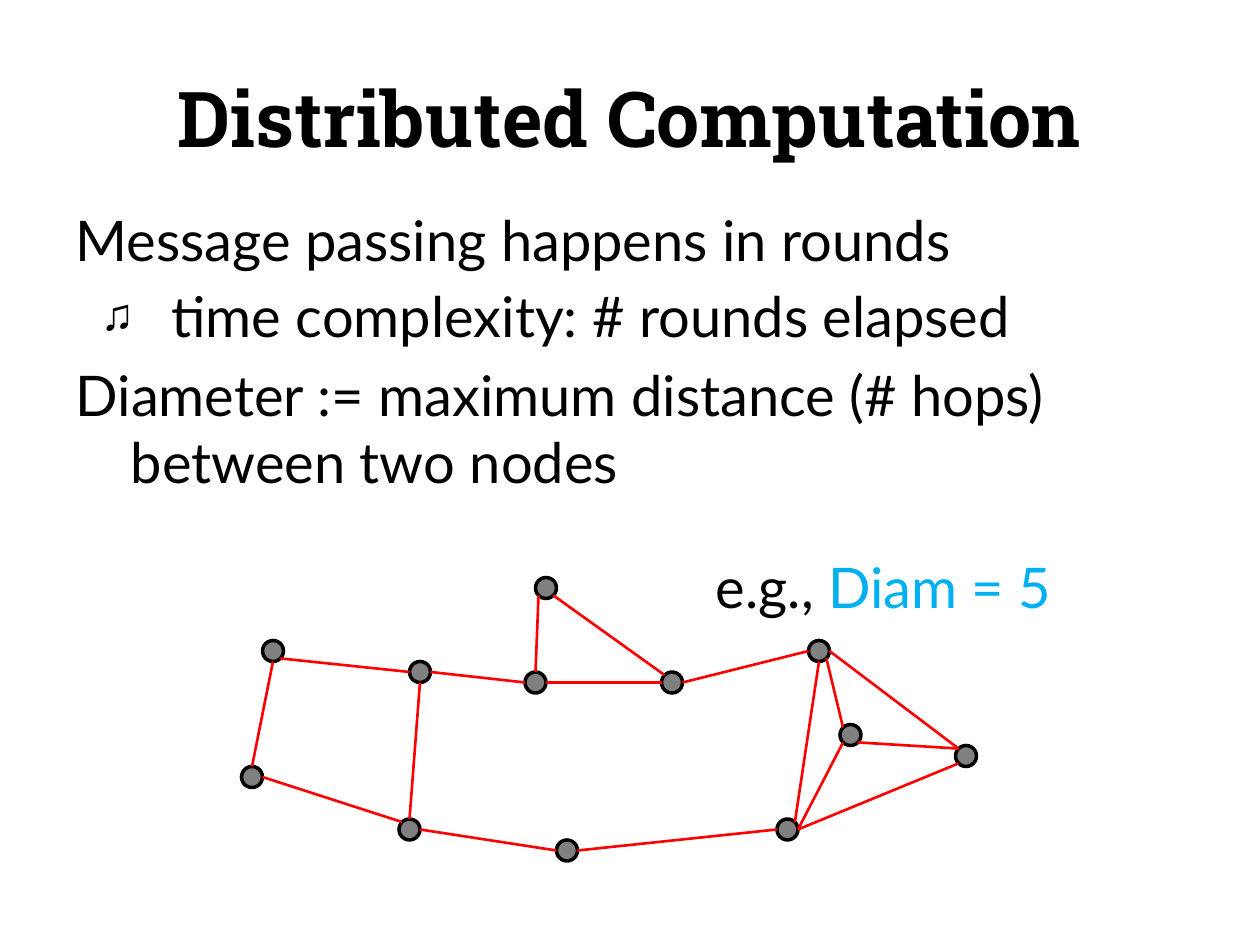
from math import cos, radians, sin

from lxml.etree import SubElement
from pptx import Presentation
from pptx.dml.color import RGBColor
from pptx.enum.shapes import MSO_CONNECTOR, MSO_SHAPE
from pptx.enum.text import MSO_ANCHOR, MSO_AUTO_SIZE, PP_ALIGN
from pptx.oxml.ns import qn
from pptx.util import Pt

COLORS = {"text": "000000", "accent": "00B0F0", "node": "808080",
          "outline": "000000", "edge": "FF0000"}
BODY_FONT = {"name": "Lato", "size": Pt(32)}
TITLE_FONT = {"name": "Roboto Slab", "size": Pt(44), "bold": True}
RADIUS = 6


def add_run(paragraph, text, font_format, color="text"):
    run = paragraph.add_run()
    run.text = text
    for attribute, value in font_format.items():
        setattr(run.font, attribute, value)
    run.font.color.rgb = RGBColor.from_string(COLORS[color])


def place(shape, left, top, width, height):
    box = {"left": left, "top": top, "width": width, "height": height}
    for attribute, value in box.items():
        setattr(shape, attribute, Pt(value))


presentation = Presentation()
presentation.slide_width, presentation.slide_height = Pt(720), Pt(540)
slide = presentation.slides.add_slide(presentation.slide_layouts[1])
title, statements = slide.placeholders

# Title
place(title, 36, 21.6, 648, 90)
title.text_frame.vertical_anchor = MSO_ANCHOR.MIDDLE
heading = title.text_frame.paragraphs[0]
heading.alignment = PP_ALIGN.CENTER
add_run(heading, "Distributed Computation", TITLE_FONT)

# Statements: text, level, left margin, bullet
place(statements, 36, 114, 684, 390)
LINES = [
    ("Message passing happens in rounds", 0, 31.5, None),
    ("time complexity: # rounds elapsed", 1, 54.75, "♫"),
    ("Diameter := maximum distance (# hops) between two nodes", 0, 31.5, None),
]
for number, (text, level, margin, bullet) in enumerate(LINES):
    frame = statements.text_frame
    statement = frame.add_paragraph() if number else frame.paragraphs[0]
    statement.level = level
    if bullet:
        statement.space_before = Pt(5)
    properties = statement._p.get_or_add_pPr()
    properties.set("marL", str(Pt(margin)))
    properties.set("indent", str(Pt(-40.5)))
    if bullet:
        SubElement(properties, qn("a:buSzPct")).set("val", "80000")
        SubElement(properties, qn("a:buChar")).set("char", bullet)
    else:
        SubElement(properties, qn("a:buNone"))
    add_run(statement, text, BODY_FONT)

# Network nodes, by centre
NODES = {
    "A": (156, 372), "B": (240, 384), "C": (234, 474), "D": (144, 444),
    "E": (324, 486), "F": (384, 390), "G": (468, 372), "H": (552, 432),
    "I": (450, 474), "J": (312, 336), "K": (306, 390), "L": (486, 420),
}
for x, y in NODES.values():
    node = slide.shapes.add_shape(MSO_SHAPE.OVAL, Pt(x - RADIUS), Pt(y - RADIUS),
                                  Pt(2 * RADIUS), Pt(2 * RADIUS))
    node.shadow.inherit = False
    node.fill.solid()
    node.fill.fore_color.rgb = RGBColor.from_string(COLORS["node"])
    node.line.color.rgb = RGBColor.from_string(COLORS["outline"])
    node.line.width = Pt(2)

# Network edges: each end is a node and the compass point on its rim
ANGLES = {"e": 0, "se": 45, "s": 90, "sw": 135, "w": 180, "nw": 225, "n": 270, "ne": 315}
EDGES = [
    "D e C nw", "A se B w", "B s C n", "C e E w", "B e K w", "F e G w",
    "E e I w", "G s I ne", "G e H nw", "I e H sw", "J sw K n", "F w K e",
    "J se F nw", "L sw I e", "L se H nw", "G se L nw", "A s D n",
]
for edge in EDGES:
    start, start_side, end, end_side = edge.split()
    ends = []
    for name, side in ((start, start_side), (end, end_side)):
        x, y = NODES[name]
        angle = radians(ANGLES[side])
        ends += [Pt(x + RADIUS * cos(angle)), Pt(y + RADIUS * sin(angle))]
    link = slide.shapes.add_connector(MSO_CONNECTOR.STRAIGHT, *ends)
    link.line.color.rgb = RGBColor.from_string(COLORS["edge"])
    link.line.width = Pt(1.5)
    SubElement(link._element.spPr, qn("a:effectLst"))

# Diameter of the example
example = slide.shapes.add_textbox(Pt(402), Pt(312), Pt(300), Pt(46))
example.text_frame.word_wrap = True
example.text_frame.auto_size = MSO_AUTO_SIZE.SHAPE_TO_FIT_TEXT
diameter = example.text_frame.paragraphs[0]
add_run(diameter, "e.g., ", BODY_FONT)
add_run(diameter, "Diam = 5", BODY_FONT, "accent")

presentation.save("out.pptx")
